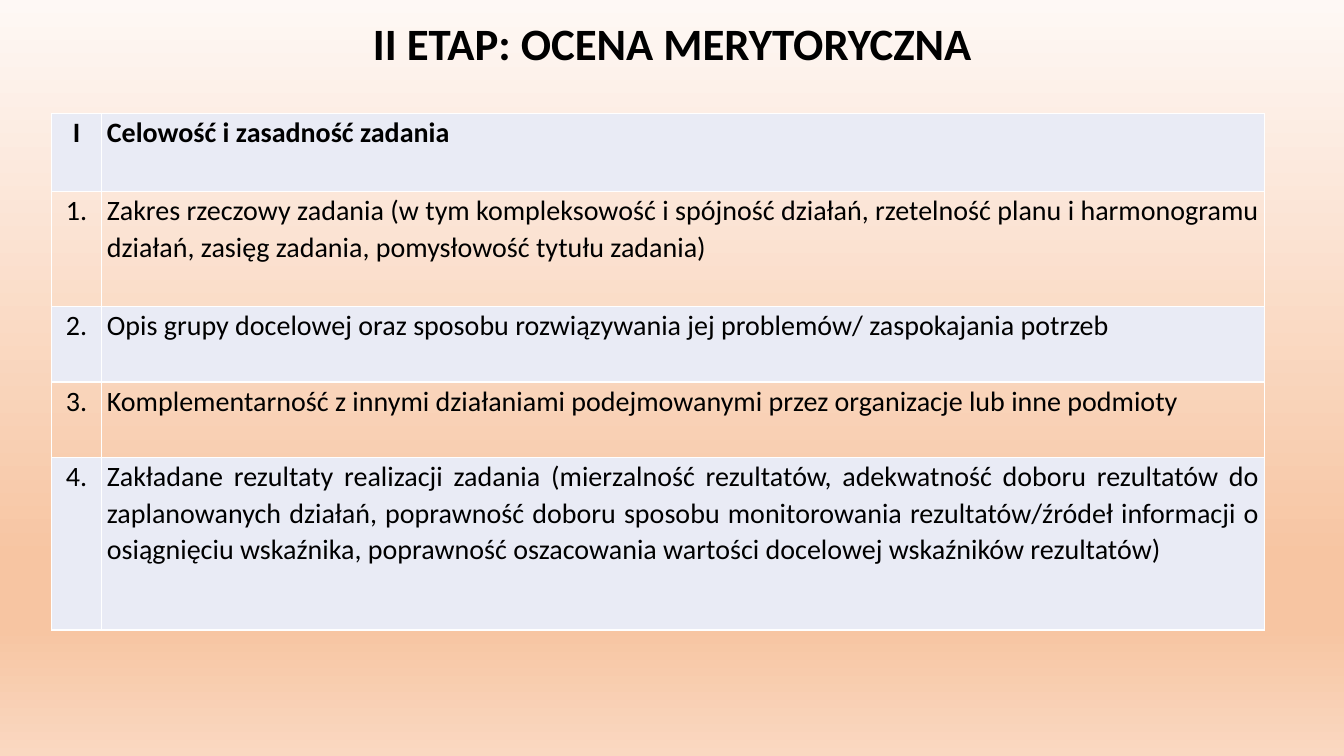
from dataclasses import dataclass

from lxml import etree
from pptx import Presentation
from pptx import util as u
from pptx.dml.color import RGBColor
from pptx.enum import text
from pptx.oxml.ns import qn


@dataclass(frozen=True)
class Theme:
    font: str = "Calibri"
    ink: str = "000000"
    band: str = "E9EBF5"
    border: str = "FFFFFF"
    title_size: int = 32
    body_size: int = 20
    border_width: int = 1
    gradient: tuple = ((0, "FEF8F5"), (74, "F7C5A2"), (83, "F7C5A2"), (100, "FAD8C1"))


THEME = Theme()
ALIGN = text.PP_ALIGN
COLUMN_WIDTHS = (0.5, 11.53)
# number, criterion, alignment of the criterion, row height
CRITERIA = (
    ("I", "Celowość i zasadność zadania", ALIGN.LEFT, 0.77),
    ("1.", "Zakres rzeczowy zadania (w tym kompleksowość i spójność działań, rzetelność planu "
           "i harmonogramu działań, zasięg zadania, pomysłowość tytułu zadania)",
     ALIGN.JUSTIFY, 1.14),
    ("2.", "Opis grupy docelowej oraz sposobu rozwiązywania jej problemów/ zaspokajania potrzeb",
     ALIGN.LEFT, 0.75),
    ("3.", "Komplementarność z innymi działaniami podejmowanymi przez organizacje lub inne podmioty",
     ALIGN.LEFT, 0.75),
    ("4.", "Zakładane rezultaty realizacji zadania (mierzalność rezultatów, adekwatność doboru "
           "rezultatów do zaplanowanych działań, poprawność doboru sposobu monitorowania "
           "rezultatów/źródeł informacji o osiągnięciu wskaźnika, poprawność oszacowania wartości "
           "docelowej wskaźników rezultatów)",
     ALIGN.JUSTIFY, 1.71),
)


def paint_background(slide):
    fill = slide.background.fill
    fill.gradient()
    fill.gradient_angle = 270
    stops = slide.element.find(".//" + qn("a:gsLst"))
    for stop in list(stops):
        stops.remove(stop)
    for percent, color in THEME.gradient:
        stop = etree.SubElement(stops, qn("a:gs"), pos=str(percent * 1000))
        etree.SubElement(stop, qn("a:srgbClr"), val=color)


def write(frame, words, size, align, bold):
    para = frame.paragraphs[0]
    para.text = words
    para.alignment = align
    para.line_spacing = 1.07
    para.space_before = u.Pt(0)
    para.space_after = u.Pt(8)
    para.font.name = THEME.font
    para.font.size = u.Pt(size)
    para.font.bold = bold
    para.font.color.rgb = RGBColor.from_string(THEME.ink)


def add_title(slide, words):
    title = slide.shapes.title
    title.left, title.top = u.Inches(0.92), u.Inches(0.12)
    title.width, title.height = u.Inches(11.5), u.Inches(0.57)
    frame = title.text_frame
    frame.auto_size = text.MSO_AUTO_SIZE.NONE
    frame.vertical_anchor = text.MSO_ANCHOR.MIDDLE
    write(frame, words, THEME.title_size, ALIGN.CENTER, True)


def draw_borders(cell):
    """Line all four sides; call before filling, as lines precede the fill in XML."""
    properties = cell._tc.get_or_add_tcPr()
    for side in ("lnL", "lnR", "lnT", "lnB"):
        line = etree.SubElement(properties, qn("a:" + side), w=str(u.Pt(THEME.border_width)))
        solid = etree.SubElement(line, qn("a:solidFill"))
        etree.SubElement(solid, qn("a:srgbClr"), val=THEME.border)


def format_cell(cell, words, align, bold, banded):
    cell.margin_left = cell.margin_right = u.Inches(0.05)
    cell.margin_top = cell.margin_bottom = 0
    draw_borders(cell)
    if banded:
        cell.fill.solid()
        cell.fill.fore_color.rgb = RGBColor.from_string(THEME.band)
    else:
        cell.fill.background()
    write(cell.text_frame, words, THEME.body_size, align, bold)


def add_criteria_table(slide):
    height = sum(criterion[-1] for criterion in CRITERIA)
    table = slide.shapes.add_table(
        len(CRITERIA), len(COLUMN_WIDTHS), u.Inches(0.51), u.Inches(1.13),
        u.Inches(sum(COLUMN_WIDTHS)), u.Inches(height)).table
    table.first_row = table.horz_banding = False
    for column, width in zip(table.columns, COLUMN_WIDTHS):
        column.width = u.Inches(width)
    for index, (number, criterion, align, row_height) in enumerate(CRITERIA):
        table.rows[index].height = u.Inches(row_height)
        heading, banded = index == 0, index % 2 == 0
        format_cell(table.cell(index, 0), number, ALIGN.CENTER, heading, banded)
        format_cell(table.cell(index, 1), criterion, align, heading, banded)


def main():
    deck = Presentation()
    deck.slide_width, deck.slide_height = u.Inches(13.33), u.Inches(7.5)
    slide = deck.slides.add_slide(deck.slide_layouts.get_by_name("Title Only"))
    paint_background(slide)
    add_title(slide, "II ETAP: OCENA MERYTORYCZNA")
    add_criteria_table(slide)
    deck.save("out.pptx")


if __name__ == "__main__":
    main()
